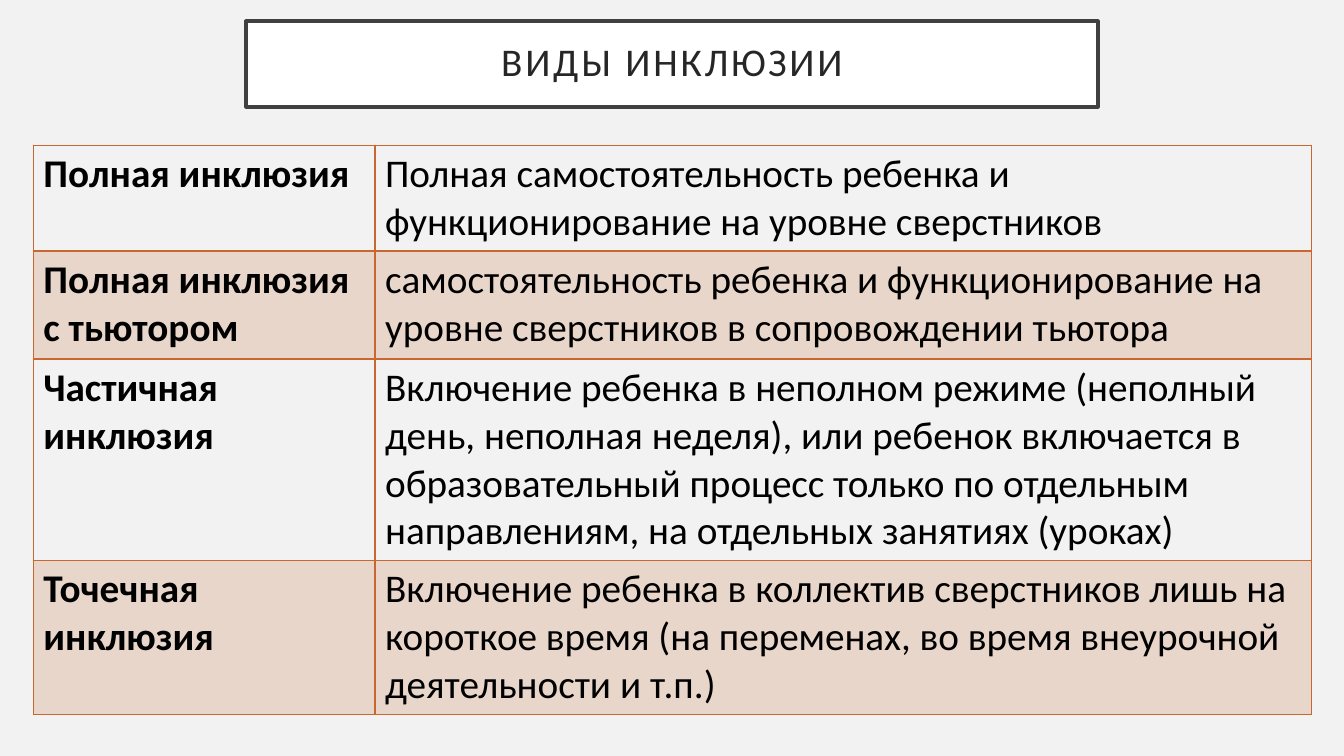
from lxml import etree
from pptx import Presentation
from pptx import util as u
from pptx.dml.color import RGBColor
from pptx.enum import shapes, text
from pptx.oxml.ns import qn

ACCENT = "C96731"
FONT = "Calibri"
SIZE = 28
KINDS = [
    ("Полная инклюзия",
     "Полная самостоятельность ребенка и функционирование на уровне сверстников"),
    ("Полная инклюзия с тьютором",
     "самостоятельность ребенка и функционирование на уровне сверстников "
     "в сопровождении тьютора"),
    ("Частичная инклюзия",
     "Включение ребенка в неполном режиме (неполный день, неполная неделя), "
     "или ребенок включается в образовательный процесс только по отдельным "
     "направлениям, на отдельных занятиях (уроках)"),
    ("Точечная инклюзия",
     "Включение ребенка в коллектив сверстников лишь на короткое время "
     "(на переменах, во время внеурочной деятельности и т.п.)"),
]
COLUMN_WIDTHS = (3.39, 9.29)
ROW_HEIGHTS = (1.05, 1.07, 2.0, 1.53)


def paint(color_format, color):
    color_format.rgb = RGBColor.from_string(color)


def fill_solid(fill, color):
    fill.solid()
    paint(fill.fore_color, color)


def style_font(font, color, bold=False):
    font.name = FONT
    font.size = u.Pt(SIZE)
    font.bold = bold
    paint(font.color, color)


def add_heading(slide, box, caption):
    heading = slide.shapes.add_shape(
        shapes.MSO_SHAPE.RECTANGLE, *map(u.Inches, box))
    heading.shadow.inherit = False
    fill_solid(heading.fill, "FFFFFF")
    paint(heading.line.color, "404040")
    heading.line.width = u.Pt(2.5)
    frame = heading.text_frame
    frame.word_wrap = True
    frame.vertical_anchor = text.MSO_ANCHOR.MIDDLE
    frame.margin_left = frame.margin_right = u.Inches(0.2)
    frame.margin_top = frame.margin_bottom = u.Inches(0.2)
    line = frame.paragraphs[0]
    line.alignment = text.PP_ALIGN.CENTER
    line.line_spacing = 0.9
    caption_run = line.add_run()
    caption_run.text = caption
    style_font(caption_run.font, "262626")
    caption_run.font._element.set("spc", "200")


def set_borders(cell, widths):
    properties = cell._tc.get_or_add_tcPr()
    for position, (side, width) in enumerate(widths.items()):
        border = etree.Element(qn(f"a:ln{side}"), w=str(u.Pt(width)))
        solid = etree.SubElement(border, qn("a:solidFill"))
        etree.SubElement(solid, qn("a:srgbClr"), val=ACCENT)
        properties.insert(position, border)


def shade(cell):
    fill_solid(cell.fill, ACCENT)
    color = cell._tc.tcPr.find(qn("a:solidFill")).find(qn("a:srgbClr"))
    etree.SubElement(color, qn("a:alpha"), val="20000")


def add_kinds_table(slide, left, top):
    table = slide.shapes.add_table(
        len(KINDS), len(COLUMN_WIDTHS), u.Inches(left), u.Inches(top),
        u.Inches(sum(COLUMN_WIDTHS)), u.Inches(sum(ROW_HEIGHTS))).table
    table.first_row = table.horz_banding = False
    for column, width in zip(table.columns, COLUMN_WIDTHS):
        column.width = u.Inches(width)
    for row_index, (row, height) in enumerate(zip(table.rows, ROW_HEIGHTS)):
        row.height = u.Inches(height)
        for column_index, cell in enumerate(row.cells):
            cell.text = KINDS[row_index][column_index]
            style_font(cell.text_frame.paragraphs[0].font, "000000",
                       bold=column_index == 0)
            if row_index % 2:
                shade(cell)
            else:
                cell.fill.background()
            set_borders(cell, {"L": 1, "R": 1,
                               "T": 2 if row_index == 1 else 1,
                               "B": 2 if row_index == 0 else 1})


def main():
    deck = Presentation()
    deck.slide_width, deck.slide_height = u.Inches(13.33), u.Inches(7.5)
    slide = deck.slides.add_slide(deck.slide_layouts[6])
    fill_solid(slide.background.fill, "F2F2F2")
    add_heading(slide, (2.44, 0.21, 8.45, 0.85), "ВИДЫ ИНКЛЮЗИИ")
    add_kinds_table(slide, 0.33, 1.44)
    deck.save("out.pptx")


if __name__ == "__main__":
    main()
